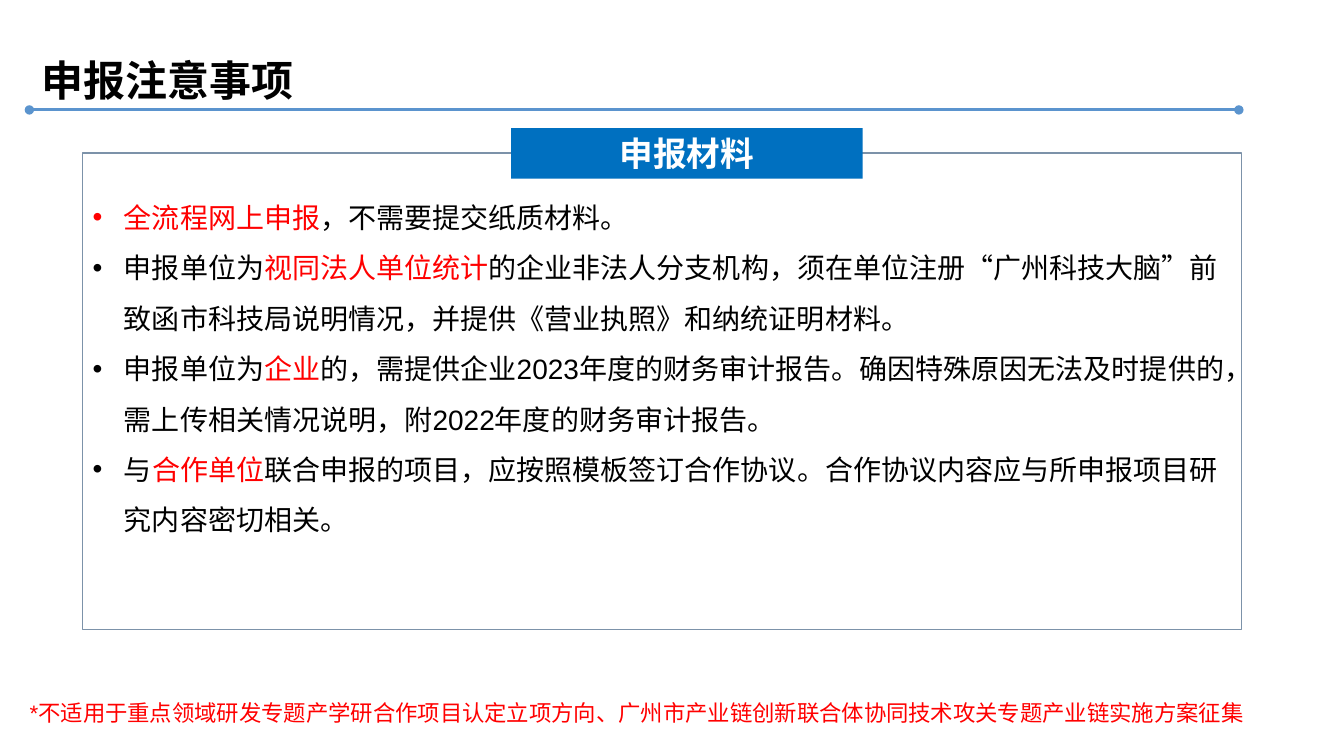
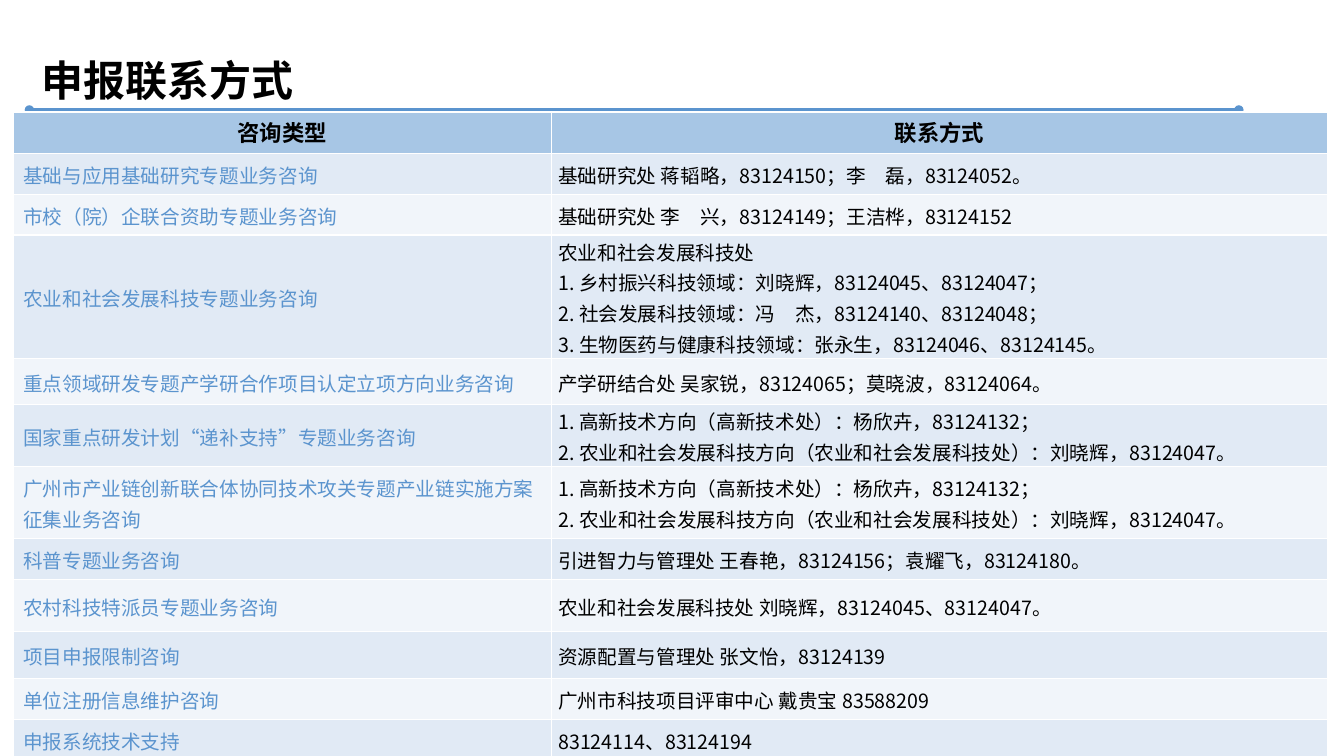
from lxml.etree import SubElement
from pptx import Presentation
from pptx.dml.color import RGBColor
from pptx.enum.lang import MSO_LANGUAGE_ID
from pptx.enum.shapes import MSO_CONNECTOR, MSO_SHAPE
from pptx.enum.text import MSO_ANCHOR, MSO_AUTO_SIZE, PP_ALIGN
from pptx.oxml.ns import qn
from pptx.util import Cm, Pt

BLACK = "000000"
WHITE = "FFFFFF"
RED = "FF0000"
RULE_BLUE = "5B94CE"
BANNER_BLUE = "0070C0"
FRAME_GREY = "7C92A9"
HEADER_FILL = "A7C6E5"
ROW_FILLS = ("E1EAF5", "F1F5FA")

LATIN_FONT = "Arial"
CHINESE_FONT = "Noto Sans CJK SC"

TITLE_AND_BODY = 1
TITLE_ONLY = 5

MATERIALS = [
    ("", "全流程网上申报", "，不需要提交纸质材料。"),
    ("申报单位为", "视同法人单位统计",
     "的企业非法人分支机构，须在单位注册“广州科技大脑”前致函市科技局说明情况，并提供《营业执照》和纳统证明材料。"),
    ("申报单位为", "企业",
     "的，需提供企业2023年度的财务审计报告。确因特殊原因无法及时提供的，需上传相关情况说明，附2022年度的财务审计报告。"),
    ("与", "合作单位",
     "联合申报的项目，应按照模板签订合作协议。合作协议内容应与所申报项目研究内容密切相关。"),
]

FOOTNOTE = "*不适用于重点领域研发专题产学研合作项目认定立项方向、广州市产业链创新联合体协同技术攻关专题产业链实施方案征集"

TECHNOLOGY_CONTACTS = (
    "1. 高新技术方向（高新技术处）：杨欣卉，83124132；\n"
    "2. 农业和社会发展科技方向（农业和社会发展科技处）：刘晓辉，83124047。"
)

CONTACTS = [
    (1.04, "咨询类型", "联系方式"),
    (1.02, "基础与应用基础研究专题业务咨询", "基础研究处 蒋韬略，83124150；李　磊，83124052。"),
    (1.02, "市校（院）企联合资助专题业务咨询", "基础研究处 李　兴，83124149；王洁桦，83124152"),
    (3.1, "农业和社会发展科技专题业务咨询",
     "农业和社会发展科技处\n"
     "1. 乡村振兴科技领域：刘晓辉，83124045、83124047；\n"
     "2. 社会发展科技领域：冯　杰，83124140、83124048；\n"
     "3. 生物医药与健康科技领域：张永生，83124046、83124145。"),
    (1.17, "重点领域研发专题产学研合作项目认定立项方向业务咨询",
     "产学研结合处 吴家锐，83124065；莫晓波，83124064。"),
    (1.55, "国家重点研发计划“递补支持”专题业务咨询", TECHNOLOGY_CONTACTS),
    (1.81, "广州市产业链创新联合体协同技术攻关专题产业链实施方案征集业务咨询", TECHNOLOGY_CONTACTS),
    (1.04, "科普专题业务咨询", "引进智力与管理处 王春艳，83124156；袁耀飞，83124180。"),
    (1.32, "农村科技特派员专题业务咨询", "农业和社会发展科技处 刘晓辉，83124045、83124047。"),
    (1.17, "项目申报限制咨询", "资源配置与管理处 张文怡，83124139"),
    (1.03, "单位注册信息维护咨询", "广州市科技项目评审中心 戴贵宝 83588209"),
    (1.03, "申报系统技术支持", "83124114、83124194"),
]


def color(hex_string):
    return RGBColor.from_string(hex_string)


def format_run(run, size, hex_string, bold=False, font_name=LATIN_FONT):
    font = run.font
    font.size = Pt(size)
    font.bold = bold
    font.color.rgb = color(hex_string)
    font.name = font_name
    font.language_id = MSO_LANGUAGE_ID.SIMPLIFIED_CHINESE
    properties = run.font._element
    SubElement(properties, qn("a:ea"), typeface=CHINESE_FONT)


def format_text(text_frame, size, hex_string, bold=False, font_name=LATIN_FONT,
                alignment=PP_ALIGN.LEFT, line_spacing=1.0):
    for paragraph in text_frame.paragraphs:
        paragraph.alignment = alignment
        paragraph.line_spacing = line_spacing
        for run in paragraph.runs:
            format_run(run, size, hex_string, bold, font_name)


def place(shape, left, top, width, height):
    shape.left, shape.top = Cm(left), Cm(top)
    shape.width, shape.height = Cm(width), Cm(height)


def add_title_rule(slide):
    rule = slide.shapes.add_connector(
        MSO_CONNECTOR.STRAIGHT, Cm(0.74), Cm(2.77), Cm(31.22), Cm(2.77))
    rule.line.color.rgb = color(RULE_BLUE)
    rule.line.width = Pt(2.25)
    line = rule.line._get_or_add_ln()
    for end in ("a:headEnd", "a:tailEnd"):
        SubElement(line, qn(end), type="oval")
    SubElement(rule.element.spPr, qn("a:effectLst"))


def add_titled_slide(presentation, layout_index, title_text):
    slide = presentation.slides.add_slide(presentation.slide_layouts[layout_index])
    title = slide.shapes.title
    place(title, 0.79, 0.61, 27.15, 2.18)
    text_frame = title.text_frame
    text_frame.auto_size = MSO_AUTO_SIZE.NONE
    text_frame.vertical_anchor = MSO_ANCHOR.TOP
    text_frame.text = title_text
    format_text(text_frame, 30, BLACK, True, CHINESE_FONT, line_spacing=1.5)
    add_title_rule(slide)
    return slide


def add_rectangle(slide, bounds, fill, outline=None):
    rectangle = slide.shapes.add_shape(MSO_SHAPE.RECTANGLE, *map(Cm, bounds))
    rectangle.shadow.inherit = False
    rectangle.fill.solid()
    rectangle.fill.fore_color.rgb = color(fill)
    if outline:
        rectangle.line.color.rgb = color(outline)
        rectangle.line.width = Pt(1)
    else:
        rectangle.line.fill.background()
    return rectangle


def add_banner(slide, bounds, text):
    banner = add_rectangle(slide, bounds, BANNER_BLUE)
    text_frame = banner.text_frame
    text_frame.text = text
    text_frame.vertical_anchor = MSO_ANCHOR.MIDDLE
    format_text(text_frame, 24, WHITE, True, alignment=PP_ALIGN.CENTER)


def add_bullet(paragraph):
    properties = paragraph._p.get_or_add_pPr()
    properties.set("marL", str(Cm(0.79)))
    properties.set("indent", str(-Cm(0.79)))
    SubElement(properties, qn("a:buFont"), typeface=LATIN_FONT)
    SubElement(properties, qn("a:buChar"), char="•")


def fill_bullet_list(body, items):
    text_frame = body.text_frame
    text_frame.auto_size = MSO_AUTO_SIZE.NONE
    for index, item in enumerate(items):
        paragraph = text_frame.add_paragraph() if index else text_frame.paragraphs[0]
        paragraph.line_spacing = 1.5
        paragraph.space_before = Pt(0)
        add_bullet(paragraph)
        for text, hex_string in zip(item, (BLACK, RED, BLACK)):
            if text:
                run = paragraph.add_run()
                run.text = text
                format_run(run, 20, hex_string)


def add_footnote(slide, text):
    footnote = slide.shapes.add_textbox(Cm(0.5), Cm(17.5), Cm(33), Cm(0.94))
    text_frame = footnote.text_frame
    text_frame.word_wrap = True
    text_frame.text = text
    format_text(text_frame, 16, RED)


def fill_cell(cell, text, fill, size, hex_string, bold, alignment):
    cell.fill.solid()
    cell.fill.fore_color.rgb = color(fill)
    cell.vertical_anchor = MSO_ANCHOR.MIDDLE
    cell.text_frame.text = text
    format_text(cell.text_frame, size, hex_string, bold, CHINESE_FONT, alignment, Pt(22))


def add_contact_table(slide, rows):
    widths = (13.56, 19.58)
    total_height = sum(row[0] for row in rows)
    table = slide.shapes.add_table(
        len(rows), len(widths), Cm(0.33), Cm(2.82), Cm(sum(widths)), Cm(total_height)).table
    for column, width in zip(table.columns, widths):
        column.width = Cm(width)
    for row_index, (height, *texts) in enumerate(rows):
        table.rows[row_index].height = Cm(height)
        for column_index, text in enumerate(texts):
            cell = table.cell(row_index, column_index)
            if column_index == 1:
                cell.margin_left = cell.margin_right = Cm(0.18)
                cell.margin_top = cell.margin_bottom = Cm(0)
            if row_index == 0:
                fill_cell(cell, text, HEADER_FILL, 16, BLACK, True, PP_ALIGN.CENTER)
            else:
                fill = ROW_FILLS[(row_index - 1) % 2]
                text_color = (RULE_BLUE, BLACK)[column_index]
                fill_cell(cell, text, fill, 14, text_color, False, PP_ALIGN.LEFT)


def build_materials_slide(presentation):
    slide = add_titled_slide(presentation, TITLE_AND_BODY, "申报注意事项")
    frame = add_rectangle(slide, (2.08, 3.86, 29.21, 12.01), WHITE, FRAME_GREY)
    body = slide.placeholders[1]
    body.element.addprevious(frame.element)
    place(body, 2.08, 4.5, 29.21, 10.52)
    fill_bullet_list(body, MATERIALS)
    add_banner(slide, (12.88, 3.23, 8.86, 1.27), "申报材料")
    add_footnote(slide, FOOTNOTE)


def build_contacts_slide(presentation):
    slide = add_titled_slide(presentation, TITLE_ONLY, "申报联系方式")
    add_contact_table(slide, CONTACTS)


def main():
    presentation = Presentation()
    presentation.slide_width = Cm(33.87)
    presentation.slide_height = Cm(19.05)
    build_materials_slide(presentation)
    build_contacts_slide(presentation)
    presentation.save("out.pptx")


if __name__ == "__main__":
    main()
